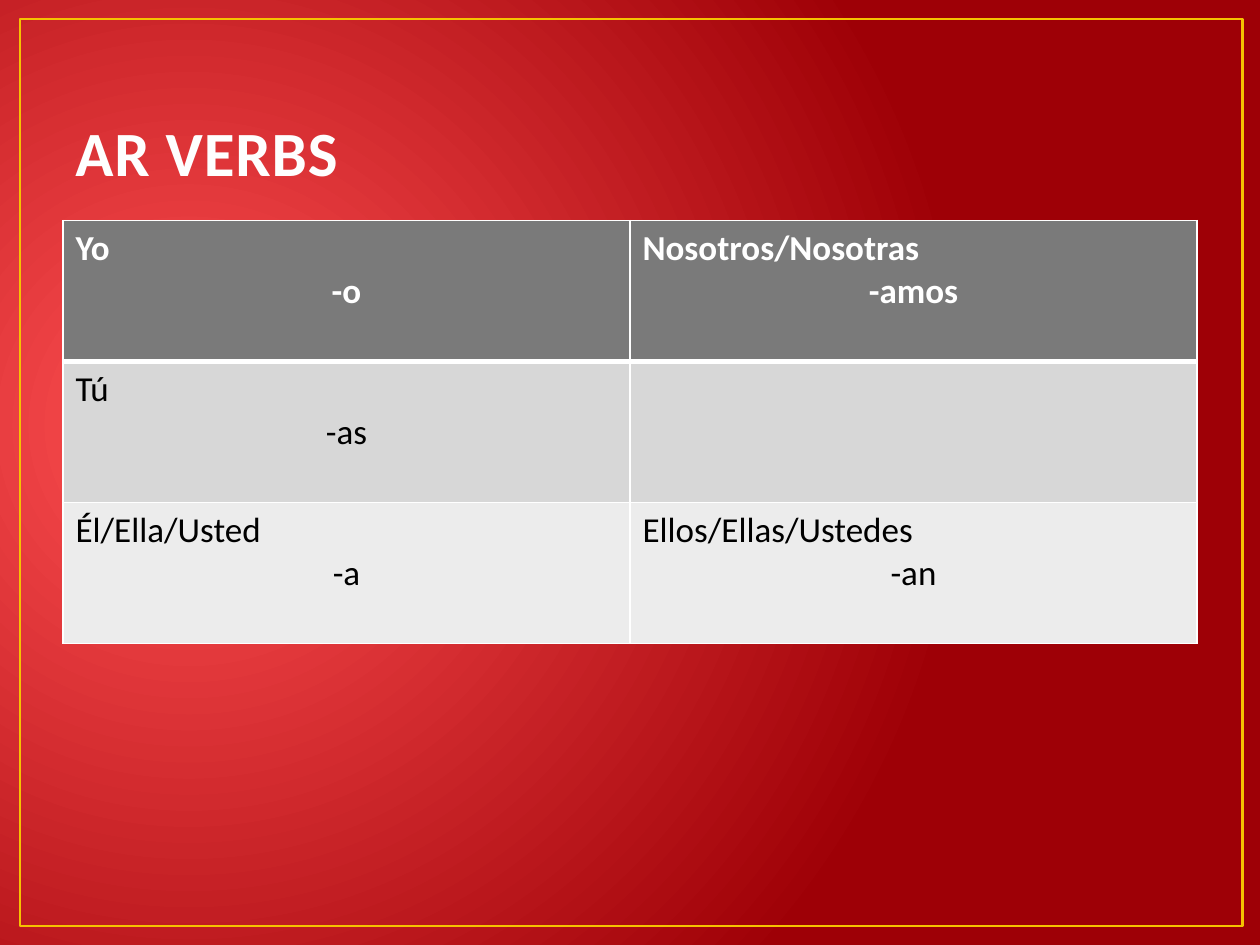
from dataclasses import dataclass

from lxml.etree import SubElement
from pptx import Presentation
from pptx.dml.color import RGBColor
from pptx.enum.shapes import MSO_SHAPE
from pptx.enum.text import MSO_ANCHOR, PP_ALIGN
from pptx.oxml import parse_xml
from pptx.oxml.ns import nsdecls, qn
from pptx.util import Inches, Pt


@dataclass(frozen=True)
class Theme:
    font: str = "Calibri"
    title_size: int = 36
    cell_size: int = 20
    title: str = "FEFEFE"
    glow: str = "FF5052"
    edge: str = "9E0006"
    frame: str = "F5C201"
    rule: str = "FFFFFF"
    header_text: str = "FFFFFF"
    body_text: str = "000000"
    row_fills: tuple = ("7A7A7A", "D7D7D7", "ECECEC")


def write(paragraph, text, *, font, size, color, bold=False, align=PP_ALIGN.LEFT, spacing=None):
    paragraph.alignment = align
    run = paragraph.add_run()
    run.text = text
    run.font.name = font
    run.font.size = Pt(size)
    run.font.bold = bold
    run.font.color.rgb = RGBColor.from_string(color)
    if spacing is not None:
        run.font._element.set("spc", str(round(spacing * 100)))


class VerbSlide:
    def __init__(self, slide, theme):
        self.slide = slide
        self.theme = theme

    def background(self):
        fill = self.slide.background.fill
        fill.gradient()
        for stop, color in zip(fill.gradient_stops, (self.theme.glow, self.theme.edge)):
            stop.color.rgb = RGBColor.from_string(color)
        fill.gradient_stops[0].position = 0
        fill.gradient_stops[1].position = 1
        gradient = self.slide._element.find(".//" + qn("a:gradFill"))
        gradient.remove(gradient.find(qn("a:lin")))
        circle = SubElement(gradient, qn("a:path"), {"path": "circle"})
        SubElement(circle, qn("a:fillToRect"),
                   {"l": "15000", "t": "50000", "r": "85000", "b": "60000"})

    def frame(self, left, top, width, height):
        frame = self.slide.shapes.add_shape(
            MSO_SHAPE.RECTANGLE, Inches(left), Inches(top), Inches(width), Inches(height))
        frame.shadow.inherit = False
        frame.fill.background()
        frame.line.color.rgb = RGBColor.from_string(self.theme.frame)
        frame.line.width = Pt(1.5)

    def title(self, text, left, top, width, height):
        title = self.slide.shapes.add_textbox(
            Inches(left), Inches(top), Inches(width), Inches(height)).text_frame
        title.word_wrap = True
        title.vertical_anchor = MSO_ANCHOR.BOTTOM
        write(title.paragraphs[0], text, font=self.theme.font, size=self.theme.title_size,
              color=self.theme.title, bold=True, spacing=0.5)

    def borders(self, cell, top, bottom):
        properties = cell._tc.get_or_add_tcPr()
        sides = (("lnL", 1), ("lnR", 1), ("lnT", top), ("lnB", bottom))
        for position, (side, width) in enumerate(sides):
            properties.insert(position, parse_xml(
                f'<a:{side} {nsdecls("a")} w="{Pt(width)}"><a:solidFill>'
                f'<a:srgbClr val="{self.theme.rule}"/></a:solidFill></a:{side}>'))

    def endings_table(self, rows, left, top, width, row_height):
        table = self.slide.shapes.add_table(
            len(rows), len(rows[0]), Inches(left), Inches(top),
            Inches(width), Inches(row_height * len(rows))).table
        for row_index, row in enumerate(rows):
            header = row_index == 0
            for column_index, lines in enumerate(row):
                cell = table.cell(row_index, column_index)
                cell.fill.solid()
                cell.fill.fore_color.rgb = RGBColor.from_string(self.theme.row_fills[row_index])
                self.borders(cell, top=3 if row_index == 1 else 1, bottom=3 if header else 1)
                for line_index, line in enumerate(lines):
                    frame = cell.text_frame
                    paragraph = frame.add_paragraph() if line_index else frame.paragraphs[0]
                    write(paragraph, line, font=self.theme.font, size=self.theme.cell_size,
                          color=self.theme.header_text if header else self.theme.body_text,
                          bold=header, align=PP_ALIGN.CENTER if line_index else PP_ALIGN.LEFT)


def main():
    presentation = Presentation()
    presentation.slide_width = Inches(10)
    presentation.slide_height = Inches(7.5)
    verbs = VerbSlide(presentation.slides.add_slide(presentation.slide_layouts[6]), Theme())
    endings = [
        [("Yo", "-o"), ("Nosotros/Nosotras", "-amos")],
        [("Tú", "-as"), ()],
        [("Él/Ella/Usted", "-a"), ("Ellos/Ellas/Ustedes", "-an")],
    ]
    verbs.background()
    verbs.frame(0.16, 0.15, 9.7, 7.2)
    verbs.title("AR VERBS", 0.5, 0.3, 9, 1.25)
    verbs.endings_table(endings, 0.5, 1.75, 9, 1.12)
    presentation.save("out.pptx")


if __name__ == "__main__":
    main()
